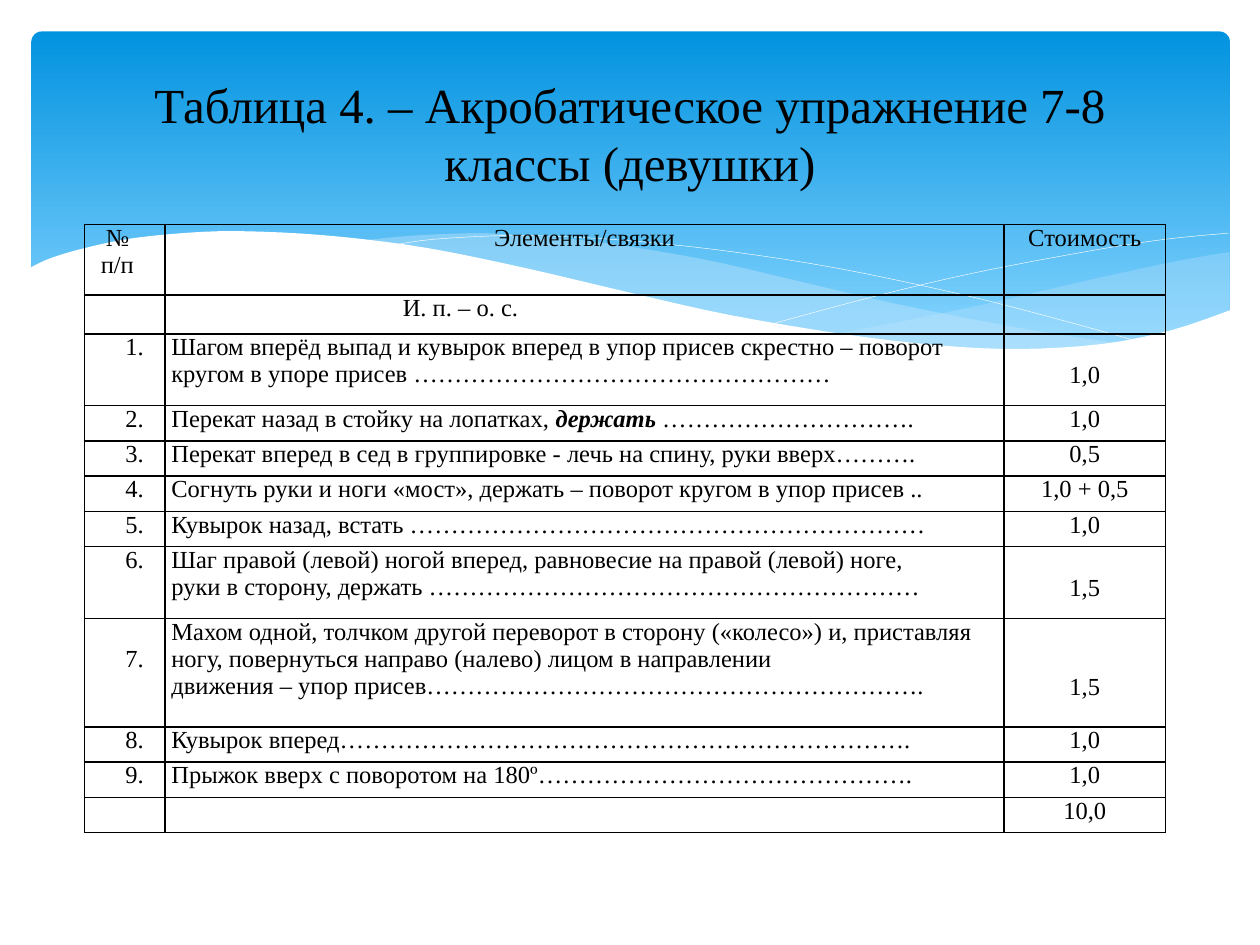
from lxml import etree
from pptx import Presentation, util as u
from pptx.dml.color import RGBColor
from pptx.enum import shapes, text
from pptx.oxml.ns import qn

BLACK = RGBColor(0, 0, 0)
WHITE = RGBColor(255, 255, 255)
DEEP_BLUE = RGBColor(0x02, 0x93, 0xE0)
LIGHT_BLUE = RGBColor(0x83, 0xD3, 0xFE)
PALE_BLUE = RGBColor(0xC6, 0xE7, 0xFC)
FONT = "Times New Roman"
LEFT, CENTER, RIGHT = text.PP_ALIGN.LEFT, text.PP_ALIGN.CENTER, text.PP_ALIGN.RIGHT
LINE = 0.22

TITLE = "Таблица 4. – Акробатическое упражнение 7-8 классы (девушки)"
HEADINGS = ("№\nп/п", "Элементы/связки", "Стоимость")
START_POSITION = "И. п. – о. с."
TOTAL = "10,0"
ELEMENTS = [
    ("Шагом вперёд выпад и кувырок вперед в упор присев скрестно – поворот "
     "кругом в упоре присев ……………………………………………", "1,0"),
    ("Перекат назад в стойку на лопатках, *держать *………………………….", "1,0"),
    ("Перекат вперед в сед в группировке - лечь на спину, руки вверх……….", "0,5"),
    ("Согнуть руки и ноги «мост», держать – поворот кругом в упор присев ..", "1,0 + 0,5"),
    ("Кувырок назад, встать ………………………………………………………", "1,0"),
    ("Шаг правой (левой) ногой вперед, равновесие на правой (левой) ноге,\n"
     "руки в сторону, держать ……………………………………………………", "1,5"),
    ("Махом одной, толчком другой переворот в сторону («колесо») и, приставляя "
     "ногу, повернуться направо (налево) лицом в направлении\n"
     "движения – упор присев…………………………………………………….", "1,5"),
    ("Кувырок вперед…………………………………………………………….", "1,0"),
    ("Прыжок вверх с поворотом на 180º……………………………………….", "1,0"),
]
NUMBER_DROP = {7: 1}
SCORE_DROP = {1: 1, 6: 1, 7: 2}
COLUMNS = (0.64, 6.66, 1.28)
ROW = 0.28
ROW_HEIGHTS = (2 * ROW, 0.31, 0.57, ROW, ROW, ROW, ROW, 0.57, 0.86, ROW, ROW, ROW)

RIGHT_WAVE = [
    [(9.76, 2), (9.35, 2.07), (8.61, 2.23), (7.79, 2.42), (7.06, 2.57), (6.61, 2.65)],
    [(6.61, 2.65), (7.05, 2.71), (7.57, 2.76), (8.03, 2.78), (8.54, 2.76),
     (8.97, 2.7), (9.35, 2.62), (9.76, 2.47)],
]
MIDDLE_WAVE = [
    [(8.93, 2.73), (8.37, 2.65), (7.75, 2.54), (7.06, 2.4), (6.29, 2.22), (5.69, 2.08),
     (5.14, 1.98), (4.65, 1.91), (4.2, 1.87), (3.8, 1.85), (3.28, 1.87), (2.86, 1.91)],
    [(2.86, 1.91), (3.42, 1.99), (4.04, 2.11), (4.91, 2.32), (5.66, 2.48), (6.34, 2.61),
     (6.95, 2.7), (7.48, 2.76), (8.07, 2.78), (8.57, 2.77), (8.93, 2.73)],
]
FALLING_LINE = [[(3.09, 1.95), (3.44, 1.9), (4.01, 1.87), (4.5, 1.88), (5.1, 1.92), (5.82, 2),
                 (6.65, 2.13), (7.6, 2.33), (8.31, 2.51), (9.07, 2.72)]]
RISING_LINE = [[(6.13, 2.57), (6.95, 2.35), (7.76, 2.16), (8.66, 1.99), (9.24, 1.9), (9.75, 1.85)]]
WHITE_WAVE = [
    [(9.77, 2.46), (9.3, 2.62), (8.75, 2.73), (8.09, 2.77), (7.44, 2.74), (6.68, 2.65),
     (5.79, 2.5), (5.03, 2.33), (4.18, 2.13), (3.4, 1.97), (2.71, 1.88), (2.11, 1.84),
     (1.61, 1.84), (1.06, 1.89), (0.67, 1.97), (0.4, 2.05), (0.23, 2.13)],
    [(0.23, 3.29), (9.77, 3.29)],
]


def smooth(points, steps=4):
    if len(points) < 3:
        return points
    padded = [points[0], *points, points[-1]]
    curve = []
    for a, b, c, d in zip(padded, padded[1:], padded[2:], padded[3:]):
        for step in range(steps):
            t = step / steps
            curve.append(tuple(
                q + t * ((r - p) + t * ((2 * p - 5 * q + 4 * r - s) + t * (3 * q - p - 3 * r + s))) / 2
                for p, q, r, s in zip(a, b, c, d)))
    return curve + [points[-1]]


def add_wave(slide, edges, color, opacity=100, outline=False):
    points = [(u.Inches(x), u.Inches(y)) for edge in edges for x, y in smooth(edge)]
    builder = slide.shapes.build_freeform(*points[0])
    builder.add_line_segments(points[1:], close=not outline)
    wave = builder.convert_to_shape()
    wave.shadow.inherit = False
    if outline:
        wave.fill.background()
        wave.line.color.rgb = color
        wave.line.width = u.Pt(0.25)
        return
    wave.line.fill.background()
    wave.fill.solid()
    wave.fill.fore_color.rgb = color
    if opacity < 100:
        srgb = wave.fill._xPr.find(".//" + qn("a:srgbClr"))
        etree.SubElement(srgb, qn("a:alpha"), val=str(opacity * 1000))


def write(frame, content, size=14, align=LEFT, indents=()):
    frame.word_wrap = True
    for index, line in enumerate(content.split("\n")):
        paragraph = frame.paragraphs[0] if index == 0 else frame.add_paragraph()
        paragraph.alignment = align
        if indents:
            paragraph._p.get_or_add_pPr().set("marL", str(u.Inches(indents[index])))
        for part, words in enumerate(line.split("*")):
            if not words:
                continue
            run = paragraph.add_run()
            run.text = words
            run.font.name, run.font.size = FONT, u.Pt(size)
            run.font.color.rgb = BLACK
            run.font.bold = run.font.italic = part % 2 == 1
        etree.SubElement(paragraph._p, qn("a:endParaRPr"), sz=str(size * 100))


def fill_cell(cell, content="", left=0, right=0, drop=0, **style):
    cell.margin_left, cell.margin_right = u.Inches(left), u.Inches(right)
    cell.margin_top, cell.margin_bottom = u.Inches(drop * LINE), 0
    write(cell.text_frame, content, **style)
    properties = cell._tc.get_or_add_tcPr()
    for side in ("lnL", "lnR", "lnT", "lnB"):
        border = etree.SubElement(properties, qn("a:" + side), w=str(u.Pt(1)))
        paint = etree.SubElement(border, qn("a:solidFill"))
        etree.SubElement(paint, qn("a:srgbClr"), val=str(BLACK))
    cell.fill.background()


def add_background(slide):
    banner = slide.shapes.add_shape(shapes.MSO_SHAPE.ROUNDED_RECTANGLE, u.Inches(0.25),
                                    u.Inches(0.25), u.Inches(9.51), u.Inches(2.7))
    banner.adjustments[0] = 0.03
    banner.shadow.inherit = False
    banner.line.fill.background()
    banner.fill.gradient()
    banner.fill.gradient_angle = 270
    for stop, color, position in zip(banner.fill.gradient_stops, (DEEP_BLUE, LIGHT_BLUE), (0, 0.9)):
        stop.color.rgb = color
        stop.position = position
    add_wave(slide, RIGHT_WAVE, PALE_BLUE, opacity=29)
    add_wave(slide, MIDDLE_WAVE, PALE_BLUE, opacity=40)
    add_wave(slide, FALLING_LINE, WHITE, outline=True)
    add_wave(slide, RISING_LINE, WHITE, outline=True)
    add_wave(slide, WHITE_WAVE, WHITE)


def add_exercise_table(slide):
    table = slide.shapes.add_table(
        len(ROW_HEIGHTS), len(COLUMNS), u.Inches(0.67), u.Inches(1.78),
        u.Inches(sum(COLUMNS)), u.Inches(sum(ROW_HEIGHTS))).table
    table.first_row = table.horz_banding = False
    for column, width in zip(table.columns, COLUMNS):
        column.width = u.Inches(width)
    for row, height in zip(table.rows, ROW_HEIGHTS):
        row.height = u.Inches(height)

    fill_cell(table.cell(0, 0), HEADINGS[0], indents=(0.17, 0.13))
    for column in (1, 2):
        fill_cell(table.cell(0, column), HEADINGS[column], align=CENTER)
    fill_cell(table.cell(1, 0))
    fill_cell(table.cell(1, 1), START_POSITION, right=1.97, align=CENTER)
    fill_cell(table.cell(1, 2))
    for number, (element, score) in enumerate(ELEMENTS, 1):
        row = number + 1
        fill_cell(table.cell(row, 0), f"{number}.", right=0.17, align=RIGHT,
                  drop=NUMBER_DROP.get(number, 0))
        fill_cell(table.cell(row, 1), element, left=0.05)
        fill_cell(table.cell(row, 2), score, align=CENTER, drop=SCORE_DROP.get(number, 0))
    last = len(ROW_HEIGHTS) - 1
    for column, content in enumerate(("", "", TOTAL)):
        fill_cell(table.cell(last, column), content, align=CENTER)


def main():
    deck = Presentation()
    deck.slide_width, deck.slide_height = u.Inches(10), u.Inches(7.5)
    slide = deck.slides.add_slide(deck.slide_layouts[6])
    add_background(slide)
    add_exercise_table(slide)
    title = slide.shapes.add_textbox(u.Inches(0.5), u.Inches(0.37), u.Inches(9), u.Inches(1.37))
    title.text_frame.vertical_anchor = text.MSO_ANCHOR.MIDDLE
    write(title.text_frame, TITLE, size=28, align=CENTER)
    deck.save("out.pptx")


if __name__ == "__main__":
    main()
